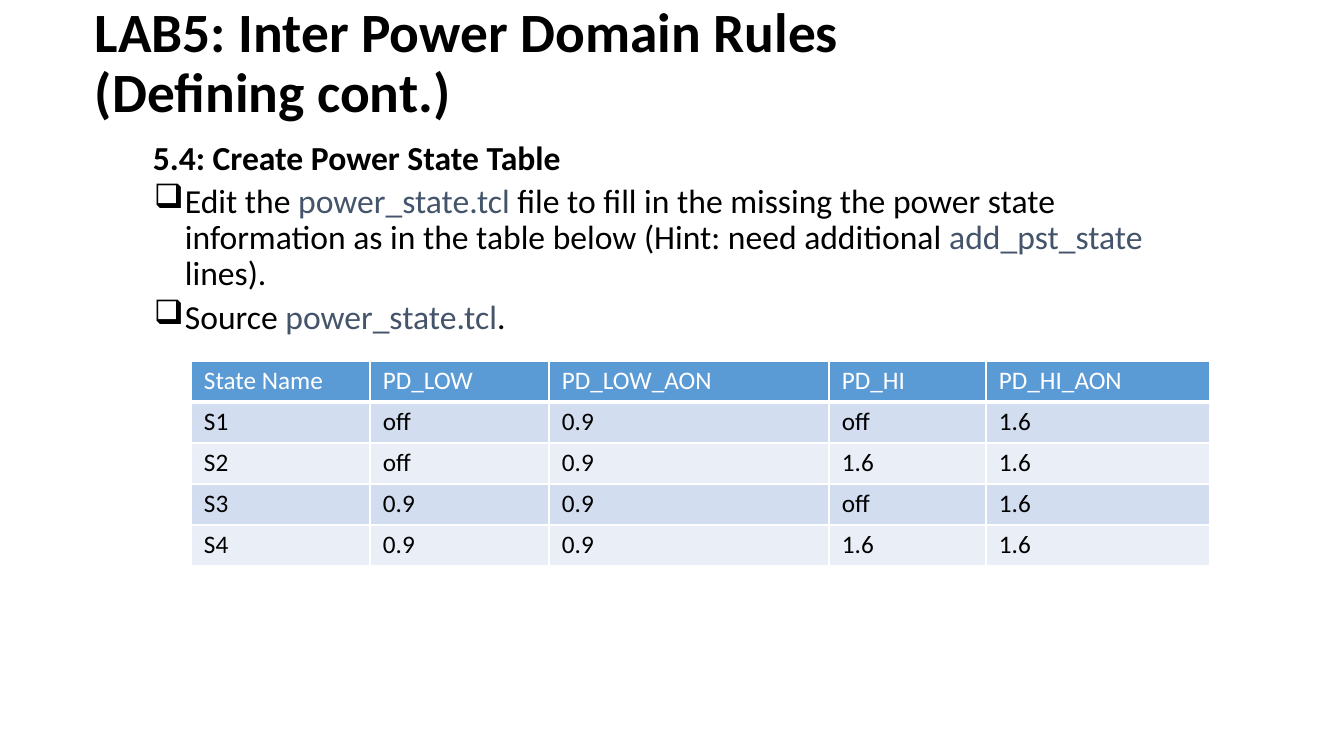
from lxml.etree import SubElement
from pptx import Presentation
from pptx.dml.color import RGBColor
from pptx.enum.text import MSO_ANCHOR
from pptx.oxml.ns import qn
from pptx.util import Pt

EMU_PER_PX = 914400 / 100.8
FONT = "Calibri"
COLORS = {
    "text": "000000", "code": "44546A", "white": "FFFFFF",
    "header": "5B9BD5", "band_dark": "D2DEEF", "band_light": "EAEFF7",
}

TITLE = "LAB5: Inter Power Domain Rules\v(Defining cont.)"
HEADING = "5.4: Create Power State Table"
# Each step is a list of (text, color) pieces
STEPS = [
    [("Edit the ", "text"), ("power_state.tcl", "code"),
     (" file to fill in the missing the power state information as in the "
      "table below (Hint: need additional ", "text"),
     ("add_pst_state", "code"), (" lines).", "text")],
    [("Source ", "text"), ("power_state.tcl", "code"), (".", "text")],
]
POWER_STATES = [
    ["State Name", "PD_LOW", "PD_LOW_AON", "PD_HI", "PD_HI_AON"],
    ["S1", "off", "0.9", "off", "1.6"],
    ["S2", "off", "0.9", "1.6", "1.6"],
    ["S3", "0.9", "0.9", "off", "1.6"],
    ["S4", "0.9", "0.9", "1.6", "1.6"],
]
COLUMN_WIDTHS = [179, 179, 280, 157, 224]
ROW_HEIGHT = 41


def px(length):
    return round(length * EMU_PER_PX)


def rgb(name):
    return RGBColor.from_string(COLORS[name])


def write(paragraph, text, size=24, color="text", bold=False):
    """Add text to a paragraph; a vertical tab starts a new line."""
    for number, line in enumerate(text.split("\v")):
        if number:
            paragraph.add_line_break()
        run = paragraph.add_run()
        run.text = line
        run.font.name = FONT
        run.font.size = Pt(size)
        run.font.bold = bold
        run.font.color.rgb = rgb(color)


def add_frame(slide, box, anchor):
    frame = slide.shapes.add_textbox(*map(px, box)).text_frame
    frame.word_wrap = True
    frame.vertical_anchor = anchor
    return frame


def format_step(paragraph, margin, hanging=0, bullet=None):
    paragraph.level = 2
    paragraph.line_spacing = 0.9
    paragraph.space_before = Pt(5)
    properties = paragraph._p.get_or_add_pPr()
    properties.set("marL", str(px(margin)))
    properties.set("indent", str(-px(hanging)))
    if bullet:
        SubElement(properties, qn("a:buChar")).set("char", bullet)
    else:
        SubElement(properties, qn("a:buNone"))


def add_title(slide, box):
    heading = add_frame(slide, box, MSO_ANCHOR.MIDDLE).paragraphs[0]
    heading.line_spacing = 0.9
    write(heading, TITLE, size=39.6, bold=True)


def add_instructions(slide, box):
    frame = add_frame(slide, box, MSO_ANCHOR.TOP)
    heading = frame.paragraphs[0]
    format_step(heading, 31)
    write(heading, HEADING, bold=True)
    for pieces in STEPS:
        step = frame.add_paragraph()
        format_step(step, 63, hanging=31, bullet="❑")
        for text, color in pieces:
            write(step, text, color=color)


def add_borders(cell, **widths):
    properties = cell._tc.get_or_add_tcPr()
    for side in "LRTB":
        line = SubElement(properties, qn(f"a:ln{side}"))
        line.set("w", str(Pt(widths.get(side, 1))))
        fill = SubElement(line, qn("a:solidFill"))
        SubElement(fill, qn("a:srgbClr")).set("val", COLORS["white"])


def add_power_table(slide, left, top):
    size = (sum(COLUMN_WIDTHS), ROW_HEIGHT * len(POWER_STATES))
    table = slide.shapes.add_table(
        len(POWER_STATES), len(COLUMN_WIDTHS),
        *map(px, (left, top, *size))).table
    for column, width in zip(table.columns, COLUMN_WIDTHS):
        column.width = px(width)
    for r, values in enumerate(POWER_STATES):
        table.rows[r].height = px(ROW_HEIGHT)
        band = "band_dark" if r % 2 else "band_light"
        for c, value in enumerate(values):
            cell = table.cell(r, c)
            cell.margin_left = cell.margin_right = px(13)
            cell.margin_top = cell.margin_bottom = px(5)
            # The rule under the header is thicker
            add_borders(cell, T=3 if r == 1 else 1, B=3 if r == 0 else 1)
            cell.fill.solid()
            cell.fill.fore_color.rgb = rgb(band if r else "header")
            write(cell.text_frame.paragraphs[0], value, size=18,
                  color="text" if r else "white")


def main():
    deck = Presentation()
    deck.slide_width, deck.slide_height = px(1344), px(756)
    slide = deck.slides.add_slide(deck.slide_layouts[6])
    add_instructions(slide, (112, 136, 1120, 595))
    add_title(slide, (85, 19, 1002, 91))
    add_power_table(slide, 191, 361)
    deck.save("out.pptx")


if __name__ == "__main__":
    main()
